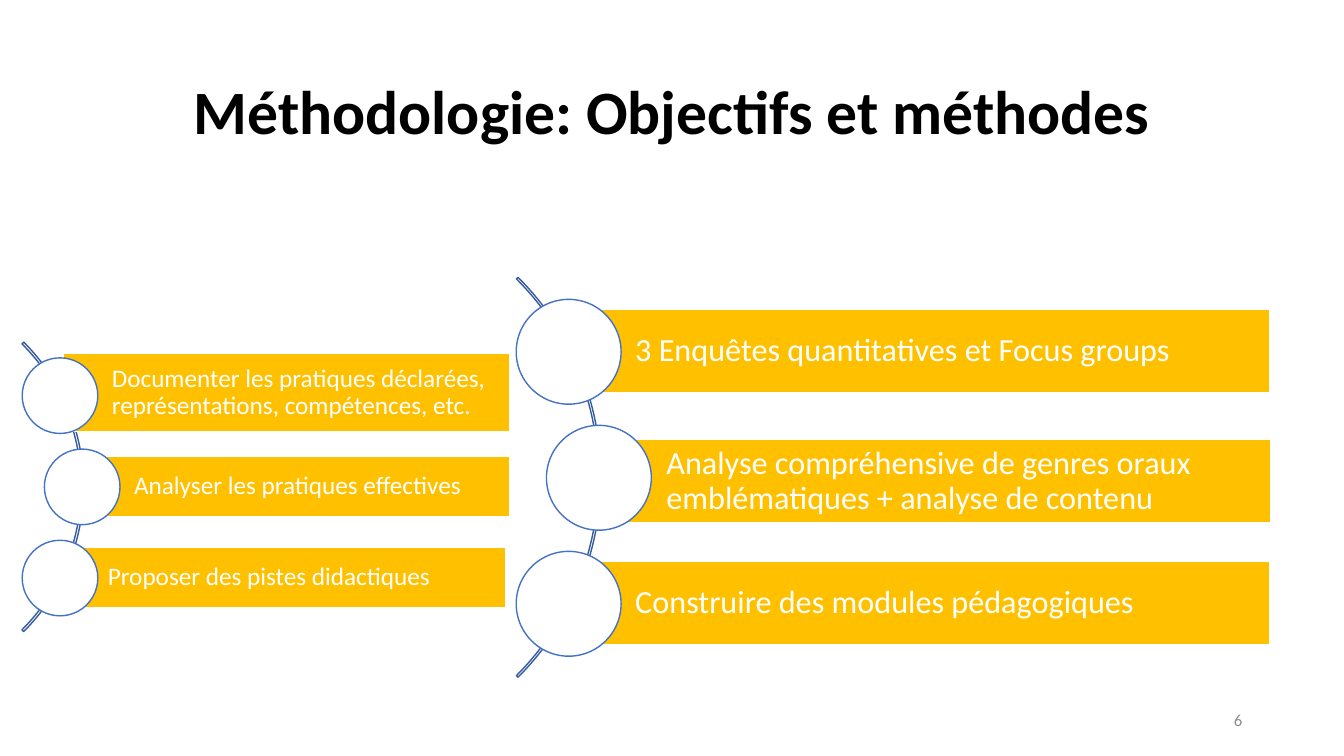
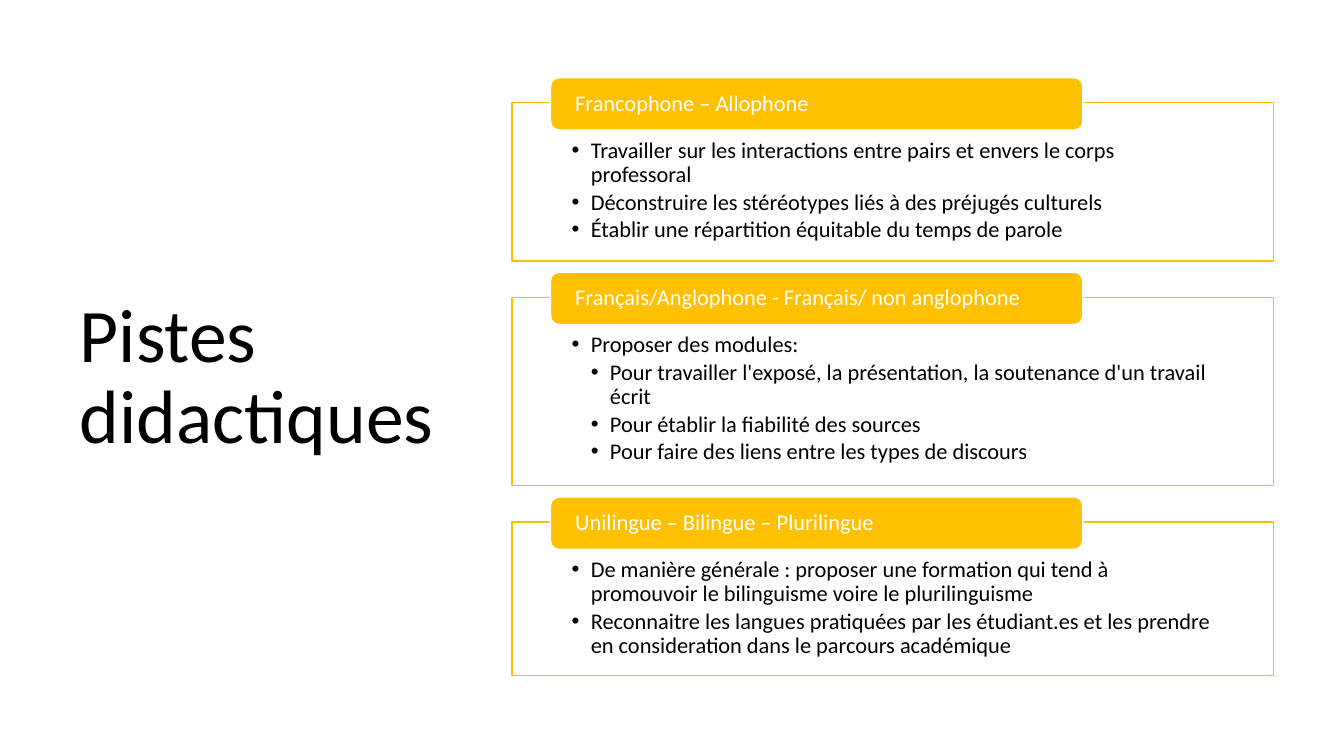
from lxml.etree import SubElement
from pptx import Presentation
from pptx.dml.color import RGBColor
from pptx.enum.shapes import MSO_SHAPE
from pptx.enum.text import MSO_ANCHOR, MSO_AUTO_SIZE, PP_ALIGN
from pptx.oxml.ns import qn
from pptx.util import Inches, Pt

# Shared style
FONT = "Calibri"
BLACK, WHITE, GREY = "000000", "FFFFFF", "8C8C8C"
GOLD, BLUE, DARK_BLUE = "FFC000", "4472C4", "365B9D"
TITLE_ONLY_LAYOUT = 5


def rgb(color):
    return RGBColor.from_string(color)


def prepare_frame(frame, insets, anchor):
    frame.word_wrap = True
    frame.auto_size = MSO_AUTO_SIZE.NONE
    frame.vertical_anchor = anchor
    frame.margin_left, frame.margin_top, frame.margin_right, frame.margin_bottom = map(Inches, insets)


def write(paragraph, text, size, color, align=PP_ALIGN.LEFT, bold=False):
    paragraph.alignment = align
    paragraph.line_spacing = 0.9
    run = paragraph.add_run()
    run.text = text
    run.font.name = FONT
    run.font.size = Pt(size)
    run.font.bold = bold
    run.font.color.rgb = rgb(color)


def add_bullet(paragraph, level):
    properties = paragraph._p.get_or_add_pPr()
    properties.set("marL", str(Inches(0.19 * level)))
    properties.set("indent", str(Inches(-0.19)))
    SubElement(properties, qn("a:buFont"), typeface="Arial")
    SubElement(properties, qn("a:buChar"), char="•")


def add_figure(group, kind, box, fill, line):
    shape = group.shapes.add_shape(kind, *map(Inches, box))
    shape.shadow.inherit = False
    if fill:
        shape.fill.solid()
        shape.fill.fore_color.rgb = rgb(fill)
    else:
        shape.fill.background()
    shape.line.color.rgb = rgb(line)
    shape.line.width = Pt(1)
    return shape


def add_titled_slide(presentation, title, box, size, align, bold=False):
    slide = presentation.slides.add_slide(presentation.slide_layouts[TITLE_ONLY_LAYOUT])
    shape = slide.shapes.title
    shape.left, shape.top, shape.width, shape.height = map(Inches, box)
    prepare_frame(shape.text_frame, (0.1, 0.05, 0.1, 0.05), MSO_ANCHOR.MIDDLE)
    write(shape.text_frame.paragraphs[0], title, size, BLACK, align, bold)
    return slide


def add_page_number(slide, number):
    box = slide.shapes.add_textbox(Inches(9.42), Inches(6.95), Inches(3), Inches(0.4))
    prepare_frame(box.text_frame, (0.1, 0.05, 0.1, 0.05), MSO_ANCHOR.MIDDLE)
    write(box.text_frame.paragraphs[0], number, 12, GREY, PP_ALIGN.RIGHT)


def add_curved_list(slide, arc, thickness, circle, step, shift, size, insets, bars):
    """Bars along an arc; the middle circle is shifted to the right."""
    group = slide.shapes.add_group_shape()
    curve = add_figure(group, MSO_SHAPE.BLOCK_ARC, arc, None, DARK_BLUE)
    for index, value in enumerate((189, 27, thickness)):
        curve.adjustments[index] = value
    left, top, diameter = circle
    for row, (text, box) in enumerate(bars):
        bar = add_figure(group, MSO_SHAPE.RECTANGLE, box, GOLD, WHITE)
        prepare_frame(bar.text_frame, insets, MSO_ANCHOR.MIDDLE)
        write(bar.text_frame.paragraphs[0], text, size, WHITE)
        circle_left = left + shift * (row == 1)
        add_figure(group, MSO_SHAPE.OVAL,
                   (circle_left, top + row * step, diameter, diameter), WHITE, BLUE)


def add_card(group, top, height, heading, items):
    card = add_figure(group, MSO_SHAPE.RECTANGLE, (5.08, top, 7.55, height), WHITE, GOLD)
    fill_color = card._element.spPr.find(qn("a:solidFill"))[0]
    SubElement(fill_color, qn("a:alpha"), val="90000")
    frame = card.text_frame
    prepare_frame(frame, (0.59, 0.36, 0.59, 0.12), MSO_ANCHOR.TOP)
    for index, (level, text) in enumerate(items):
        paragraph = frame.add_paragraph() if index else frame.paragraphs[0]
        write(paragraph, text, 16, BLACK)
        paragraph.level = level
        paragraph.space_before = Pt(0)
        paragraph.space_after = Pt(2.4)
        add_bullet(paragraph, level)
    tab = add_figure(group, MSO_SHAPE.ROUNDED_RECTANGLE, (5.46, top - 0.25, 5.28, 0.52), GOLD, WHITE)
    prepare_frame(tab.text_frame, (0.22, 0, 0.22, 0), MSO_ANCHOR.MIDDLE)
    write(tab.text_frame.paragraphs[0], heading, 16, WHITE)


def build_methodology(presentation):
    slide = add_titled_slide(presentation, "Méthodologie: Objectifs et méthodes",
                             (0.92, 0.41, 11.5, 1.45), 44, PP_ALIGN.CENTER, bold=True)
    add_page_number(slide, "6")
    # Objectives
    add_curved_list(
        slide, arc=(-3.23, 2.8, 4.06, 4.06), thickness=0.006,
        circle=(0.22, 3.55, 0.75), step=0.905, shift=0.22,
        size=18, insets=(0.48, 0.05, 0.05, 0.05),
        bars=[
            ("Documenter les pratiques déclarées, représentations, compétences, etc.",
             (0.63, 3.51, 4.43, 0.77)),
            ("Analyser les pratiques effectives", (0.85, 4.53, 4.21, 0.6)),
            ("Proposer des pistes didactiques", (0.59, 5.43, 4.43, 0.6)),
        ])
    # Methods
    add_curved_list(
        slide, arc=(0.35, 1.93, 5.61, 5.61), thickness=0.004,
        circle=(5.12, 2.97, 1.04), step=1.25, shift=0.3,
        size=23, insets=(0.66, 0.06, 0.06, 0.06),
        bars=[
            ("3 Enquêtes quantitatives et Focus groups", (5.64, 3.07, 6.95, 0.83)),
            ("Analyse compréhensive de genres oraux emblématiques + analyse de contenu",
             (5.95, 4.36, 6.65, 0.83)),
            ("Construire des modules pédagogiques", (5.64, 5.57, 6.95, 0.83)),
        ])


def build_teaching_leads(presentation):
    slide = add_titled_slide(presentation, "Pistes didactiques",
                             (0.69, 0.7, 3.74, 6.11), 54, PP_ALIGN.LEFT)
    cards = [
        (1.57, "Francophone – Allophone", [
            (1, "Travailler sur les interactions entre pairs et envers le corps professoral"),
            (1, "Déconstruire les stéréotypes liés à des préjugés culturels"),
            (1, "Établir une répartition équitable du temps de parole"),
        ]),
        (1.87, "Français/Anglophone - Français/ non anglophone", [
            (1, "Proposer des modules:"),
            (2, "Pour travailler l'exposé, la présentation, la soutenance d'un travail écrit"),
            (2, "Pour établir la fiabilité des sources"),
            (2, "Pour faire des liens entre les types de discours"),
        ]),
        (1.52, "Unilingue – Bilingue – Plurilingue", [
            (1, "De manière générale : proposer une formation qui tend à promouvoir "
                "le bilinguisme voire le plurilinguisme"),
            (1, "Reconnaitre les langues pratiquées par les étudiant.es et les prendre "
                "en consideration dans le parcours académique"),
        ]),
    ]
    # Cards stacked with equal gaps
    group = slide.shapes.add_group_shape()
    top, gap = 1.02, 0.36
    for height, heading, items in cards:
        add_card(group, top, height, heading, items)
        top += height + gap


def main():
    presentation = Presentation()
    presentation.slide_width = Inches(13.33)
    presentation.slide_height = Inches(7.5)
    build_methodology(presentation)
    build_teaching_leads(presentation)
    presentation.save("out.pptx")


if __name__ == "__main__":
    main()
